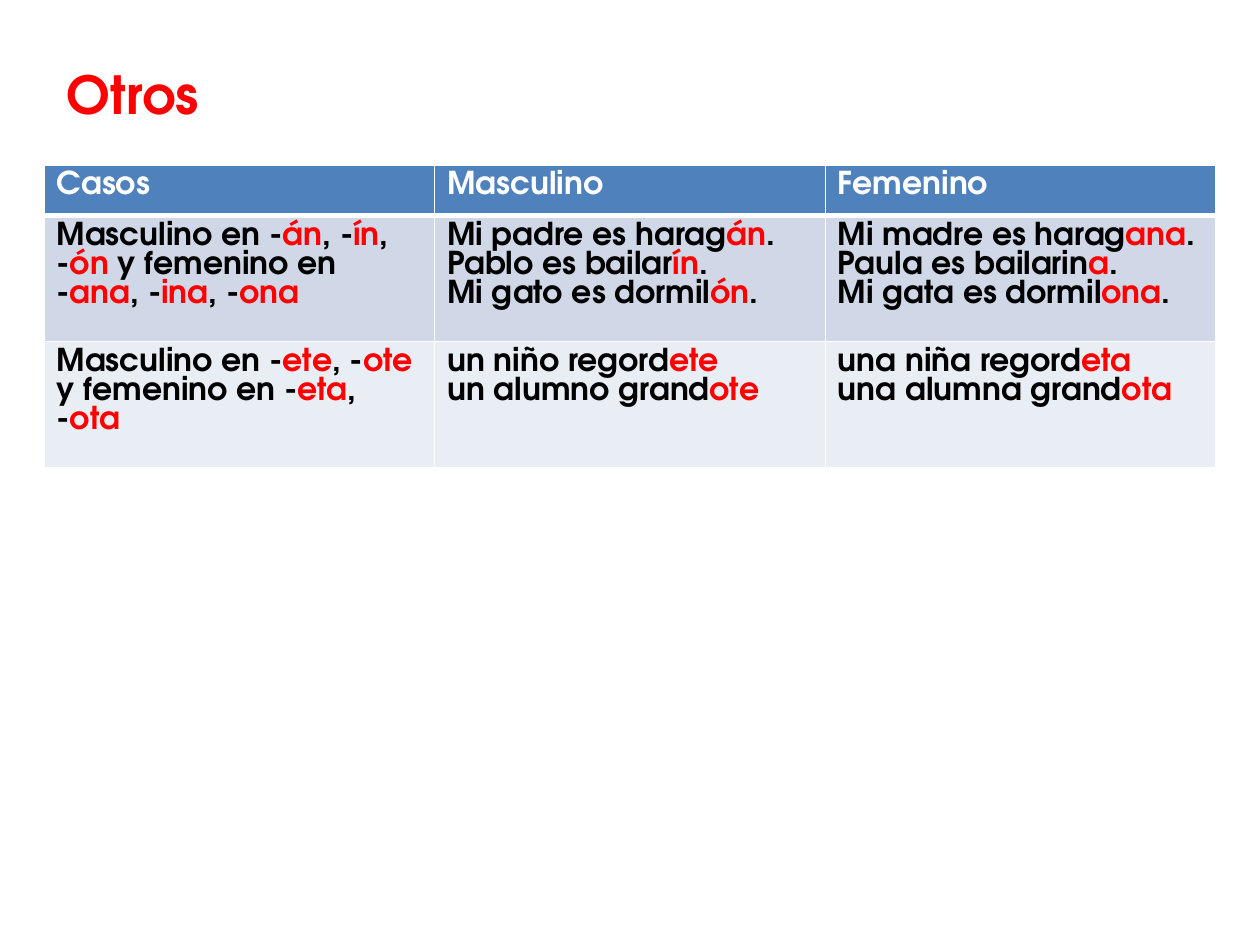
from pptx import Presentation
from pptx.dml.color import RGBColor
from pptx.oxml import parse_xml
from pptx.oxml.ns import nsdecls
from pptx.util import Inches, Pt

FONT = "TeX Gyre Adventor"
COLORS = {"white": "FFFFFF", "black": "000000", "red": "FF0000",
          "header": "4F81BD", "band_dark": "D0D8E8", "band_light": "E9EDF4"}


def write_text(frame, text, size=18, color="black", accent="red"):
    """Write one paragraph per line; parts between asterisks take the accent colour."""
    frame.word_wrap = True
    for index, line in enumerate(text.split("\n")):
        paragraph = frame.paragraphs[0] if index == 0 else frame.add_paragraph()
        for position, part in enumerate(line.split("*")):
            if part:
                run = paragraph.add_run()
                run.text = part
                run.font.name = FONT
                run.font.size = Pt(size)
                run.font.bold = True
                name = accent if position % 2 else color
                run.font.color.rgb = RGBColor.from_string(COLORS[name])


def set_borders(cell, top_width, bottom_width):
    properties = cell._tc.get_or_add_tcPr()
    widths = {"lnL": 1, "lnR": 1, "lnT": top_width, "lnB": bottom_width}
    for index, (side, width) in enumerate(widths.items()):
        properties.insert(index, parse_xml(
            f'<a:{side} {nsdecls("a")} w="{Pt(width)}"><a:solidFill>'
            f'<a:srgbClr val="{COLORS["white"]}"/></a:solidFill></a:{side}>'))


presentation = Presentation()
presentation.slide_width = Inches(10)
presentation.slide_height = Inches(7.5)
slide = presentation.slides.add_slide(presentation.slide_layouts[6])

# Title
title = slide.shapes.add_textbox(Inches(0.43), Inches(0.44), Inches(2.6), Inches(0.61))
write_text(title.text_frame, "Otros", size=30, color="red")

# Table of cases: fill, text colour, row height, cell texts
rows = [
    ("header", "white", 0.4, ["Casos", "Masculino", "Femenino"]),
    ("band_dark", "black", 1, [
        "Masculino en -*án*, -*ín*, -*ón *y femenino en -*ana*, -*ina*, -*ona*",
        "Mi padre es harag*án*.\nPablo es bailar*ín*.\nMi gato es dormil*ón*.",
        "Mi madre es harag*ana*.\nPaula es bailarin*a*.\nMi gata es dormil*ona*."]),
    ("band_light", "black", 1, [
        "Masculino en -*ete*, -*ote *y femenino en -*eta*, -*ota*",
        "un niño regord*ete*\nun alumno grand*ote*",
        "una niña regord*eta*\nuna alumna grand*ota*"]),
]
table = slide.shapes.add_table(len(rows), 3, Inches(0.35), Inches(1.31),
                               Inches(9.3), Inches(2.4)).table
for column in table.columns:
    column.width = Inches(3.1)

for row_index, (fill, color, height, texts) in enumerate(rows):
    table.rows[row_index].height = Inches(height)
    for column_index, text in enumerate(texts):
        cell = table.cell(row_index, column_index)
        cell.fill.solid()
        cell.fill.fore_color.rgb = RGBColor.from_string(COLORS[fill])
        set_borders(cell, top_width=3 if row_index == 1 else 1,
                    bottom_width=3 if row_index == 0 else 1)
        write_text(cell.text_frame, text, color=color)

presentation.save("out.pptx")
